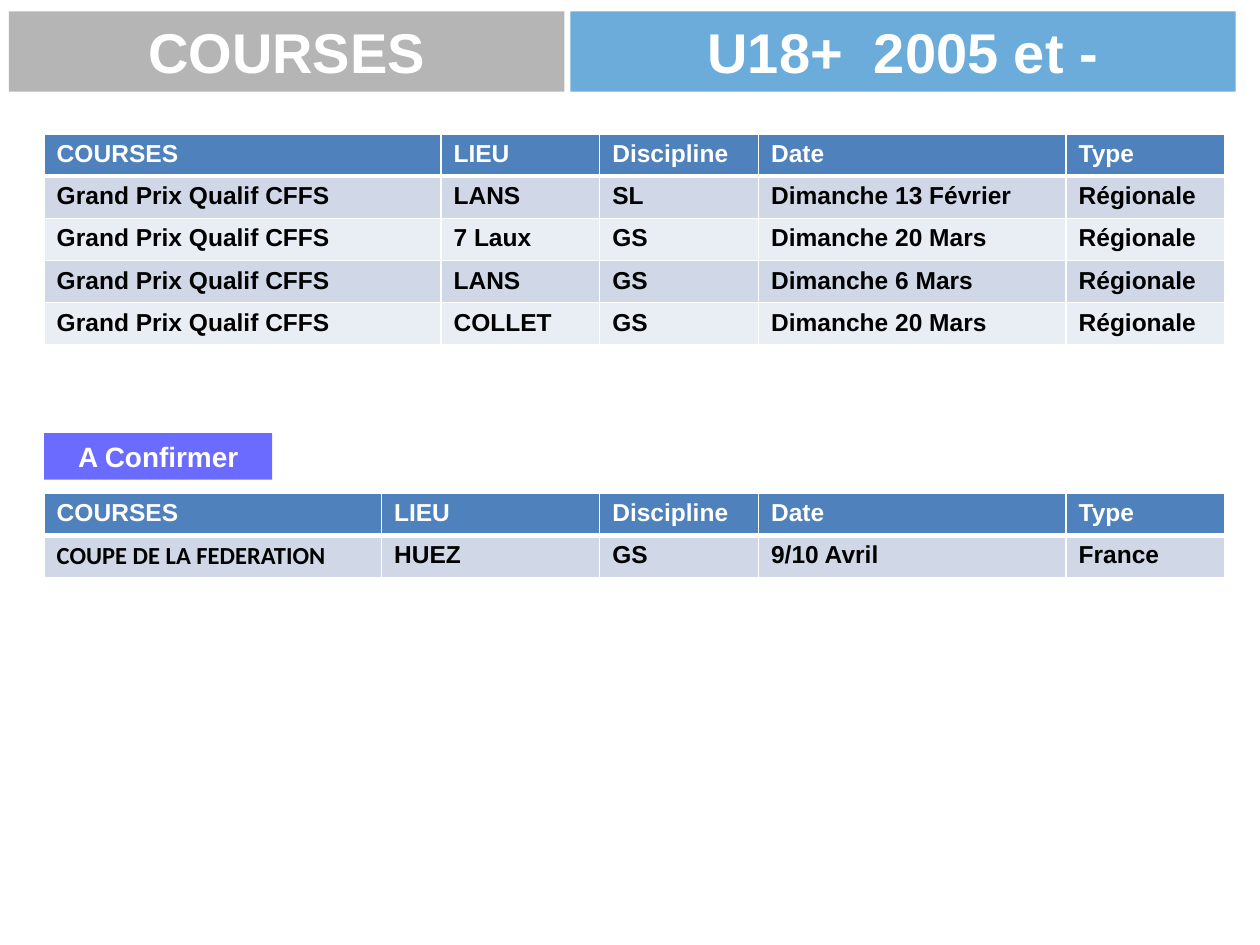
from lxml import etree
from pptx import Presentation
from pptx.dml.color import RGBColor
from pptx.enum.shapes import MSO_SHAPE
from pptx.enum.text import MSO_ANCHOR, MSO_AUTO_SIZE, PP_ALIGN
from pptx.oxml.ns import qn
from pptx.util import Cm, Pt

RECTANGLE = MSO_SHAPE.RECTANGLE
MIDDLE = MSO_ANCHOR.MIDDLE
GROW = MSO_AUTO_SIZE.SHAPE_TO_FIT_TEXT
LEFT, CENTER = PP_ALIGN.LEFT, PP_ALIGN.CENTER

WHITE = RGBColor(0xFF, 0xFF, 0xFF)
BLACK = RGBColor(0x00, 0x00, 0x00)
GREY = RGBColor(0x80, 0x80, 0x80)
SKY = RGBColor(0x00, 0x70, 0xC0)
BLUE = RGBColor(0x00, 0x00, 0xFF)
HEADER = RGBColor(0x4F, 0x81, 0xBD)
BANDS = [RGBColor(0xE9, 0xED, 0xF4), RGBColor(0xD0, 0xD8, 0xE8)]

OPACITY = 58
ROW_HEIGHT = 0.85
TABLE_LEFT = 0.89


def write(frame, text, size=14, color=WHITE, font="Arial", align=LEFT):
    paragraph = frame.paragraphs[0]
    paragraph.alignment = align
    run = paragraph.add_run()
    run.text = text
    run.font.size = Pt(size)
    run.font.bold = True
    run.font.name = font
    run.font.color.rgb = color


def set_borders(cell, top, bottom):
    """Draw white cell borders; top and bottom are widths in points, the sides 1 pt."""
    properties = cell._tc.get_or_add_tcPr()
    widths = {"a:lnL": 1, "a:lnR": 1, "a:lnT": top, "a:lnB": bottom}
    for position, (tag, width) in enumerate(widths.items()):
        line = etree.Element(qn(tag), w=str(Pt(width)))
        fill = etree.SubElement(line, qn("a:solidFill"))
        etree.SubElement(fill, qn("a:srgbClr"), val=str(WHITE))
        properties.insert(position, line)


presentation = Presentation()
presentation.slide_width = Cm(25.4)
presentation.slide_height = Cm(19.05)
slide = presentation.slides.add_slide(presentation.slide_layouts[6])

# Banners: text, left, top, width, height, colour, text size
banners = [
    ("U18+  2005 et -", 11.5, 0.23, 13.41, 1.62, SKY, 32),
    ("COURSES", 0.18, 0.23, 11.2, 1.62, GREY, 32),
    ("A Confirmer", TABLE_LEFT, 8.73, 4.6, 0.94, BLUE, 16),
]
for text, left, top, width, height, color, size in banners:
    banner = slide.shapes.add_shape(
        RECTANGLE, Cm(left), Cm(top), Cm(width), Cm(height))
    banner.shadow.inherit = False
    banner.line.fill.background()
    banner.fill.solid()
    banner.fill.fore_color.rgb = color
    tint = banner._element.spPr.find(qn("a:solidFill"))[0]
    etree.SubElement(tint, qn("a:alpha"), val=str(OPACITY * 1000))
    banner.text_frame.word_wrap = True
    banner.text_frame.auto_size = GROW
    banner.text_frame.vertical_anchor = MIDDLE
    write(banner.text_frame, text, size=size, align=CENTER)

# Race tables: top, column widths, body rows
headings = ("COURSES", "LIEU", "Discipline", "Date", "Type")
grand_prix = "Grand Prix Qualif CFFS"
cup = "COUPE DE LA FEDERATION"
race_tables = [
    (2.7, (8, 3.2, 3.2, 6.2, 3.2), [
        (grand_prix, "LANS", "SL", "Dimanche 13 Février", "Régionale"),
        (grand_prix, "7 Laux", "GS", "Dimanche 20 Mars", "Régionale"),
        (grand_prix, "LANS", "GS", "Dimanche 6 Mars", "Régionale"),
        (grand_prix, "COLLET", "GS", "Dimanche 20 Mars", "Régionale"),
    ]),
    (9.94, (6.8, 4.4, 3.2, 6.2, 3.2), [
        (cup, "HUEZ", "GS", "9/10 Avril", "France"),
    ]),
]
for top, widths, races in race_tables:
    rows = [headings, *races]
    races_table = slide.shapes.add_table(
        len(rows), len(widths), Cm(TABLE_LEFT), Cm(top),
        Cm(sum(widths)), Cm(ROW_HEIGHT * len(rows))).table
    for column, width in zip(races_table.columns, widths):
        column.width = Cm(width)
    for r, row in enumerate(rows):
        races_table.rows[r].height = Cm(ROW_HEIGHT)
        for c, text in enumerate(row):
            cell = races_table.cell(r, c)
            cell.fill.solid()
            cell.fill.fore_color.rgb = BANDS[r % 2] if r else HEADER
            set_borders(cell, top=3 if r == 1 else 1, bottom=1 if r else 3)
            write(cell.text_frame, text, color=BLACK if r else WHITE,
                  font="Calibri" if text == cup else "Arial")

presentation.save("out.pptx")
